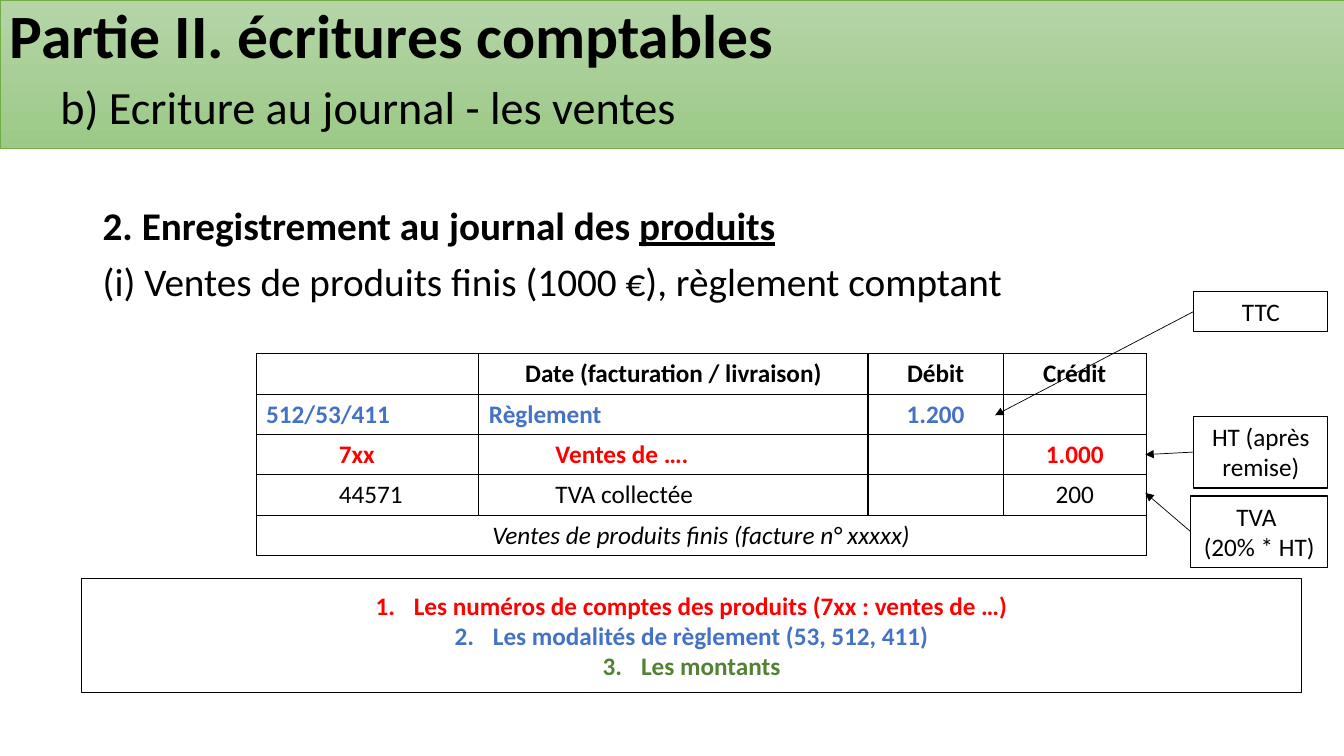
from lxml import etree
from pptx import Presentation
from pptx.dml.color import RGBColor
from pptx.enum.shapes import MSO_CONNECTOR, MSO_SHAPE
from pptx.enum.text import MSO_ANCHOR, PP_ALIGN
from pptx.oxml.ns import qn
from pptx.util import Inches, Pt

BLACK = RGBColor(0, 0, 0)
WHITE = RGBColor(255, 255, 255)
RED = RGBColor(255, 0, 0)
BLUE = RGBColor(0x44, 0x72, 0xC4)
GREEN = RGBColor(0x54, 0x82, 0x35)
EDGE = RGBColor(0x70, 0xAD, 0x47)
PALE = RGBColor(0xB5, 0xD5, 0xA7)
DEEP = RGBColor(0x9C, 0xC9, 0x87)
LEFT, CENTER = PP_ALIGN.LEFT, PP_ALIGN.CENTER
TOP, MIDDLE = MSO_ANCHOR.TOP, MSO_ANCHOR.MIDDLE
RECT, LINE = MSO_SHAPE.RECTANGLE, MSO_CONNECTOR.STRAIGHT

COLS = [0.72, 1.49, 0.66, 3.2, 1.34, 1.42]
ROW = 0.4
MERGES = [(0, 0, 1), (0, 2, 3), (1, 0, 1), (1, 2, 3), (4, 0, 5)]
SPLIT = (2, 3)  # rows whose first two columns are indented
HEAD = dict(bold=True, align=CENTER)
PAY = dict(bold=True, color=BLUE)
SALE = dict(bold=True, color=RED)
CELLS = [
    (0, 2, "Date (facturation / livraison)", HEAD),
    (0, 4, "Débit", HEAD),
    (0, 5, "Crédit", HEAD),
    (1, 0, "512/53/411", PAY),
    (1, 2, "Règlement", PAY),
    (1, 4, "1.200", dict(PAY, align=CENTER)),
    (2, 1, "7xx", SALE),
    (2, 3, "Ventes de ….", SALE),
    (2, 5, "1.000", dict(SALE, align=CENTER)),
    (3, 1, "44571", {}),
    (3, 3, "TVA collectée", {}),
    (3, 5, "200", dict(align=CENTER)),
    (4, 0, "Ventes de produits finis (facture n° xxxxx)",
     dict(italic=True, align=CENTER)),
]
# box left, top, width, height, lines, arrow tip
NOTES = [
    (11.84, 4.13, 1.33, 0.71, ["HT (après remise)"], (11.36, 4.51)),
    (11.81, 4.92, 1.36, 0.71, ["TVA ", "(20% * HT)"], (11.36, 4.89)),
    (11.84, 2.89, 1.33, 0.4, ["TTC"], (9.87, 4.12)),
]
STEPS = [
    ("Les numéros de comptes des produits (7xx : ventes de …)", RED),
    ("Les modalités de règlement (53, 512, 411)", BLUE),
    ("Les montants", GREEN),
]


def write(para, text, size=18, color=BLACK, bold=False, italic=False,
          under=False, align=LEFT):
    para.alignment = align
    run = para.add_run()
    run.text = text
    font = run.font
    font.name, font.size = "Calibri", Pt(size)
    font.bold, font.italic, font.underline = bold, italic, under
    font.color.rgb = color


def paras(frame, count):
    """Return the frame's paragraphs after bringing them to count."""
    for _ in range(count - 1):
        frame.add_paragraph()
    return frame.paragraphs


def number(para):
    props = para._p.get_or_add_pPr()
    props.set("marL", str(Inches(0.38)))
    props.set("indent", str(-Inches(0.38)))
    etree.SubElement(props, qn("a:buAutoNum"), type="arabicPeriod")


def border(cell, hidden):
    """Draw the four sides of a cell, leaving out the hidden ones."""
    props = cell._tc.get_or_add_tcPr()
    for side in "LRTB":
        line = etree.SubElement(props, qn("a:ln" + side), w=str(Pt(1)))
        if side in hidden:
            etree.SubElement(line, qn("a:noFill"))
        else:
            fill = etree.SubElement(line, qn("a:solidFill"))
            etree.SubElement(fill, qn("a:srgbClr"), val=str(BLACK))


class Page:
    def __init__(self, deck):
        self.shapes = deck.slides.add_slide(deck.slide_layouts[6]).shapes

    def text(self, *place):
        frame = self.shapes.add_textbox(*map(Inches, place)).text_frame
        frame.word_wrap = True
        return frame

    def box(self, *place, edge=BLACK, width=1, anchor=TOP):
        shape = self.shapes.add_shape(RECT, *map(Inches, place))
        shape.shadow.inherit = False
        shape.fill.solid()
        shape.fill.fore_color.rgb = WHITE
        shape.line.color.rgb = edge
        shape.line.width = Pt(width)
        shape.text_frame.word_wrap = True
        shape.text_frame.vertical_anchor = anchor
        return shape

    def arrow(self, start, end):
        line = self.shapes.add_connector(LINE, *map(Inches, start + end))
        line.line.color.rgb = BLACK
        line.line.width = Pt(0.5)
        etree.SubElement(line.line._get_or_add_ln(), qn("a:tailEnd"),
                         type="triangle")
        etree.SubElement(line._element.spPr, qn("a:effectLst"))

    def table(self, left, top):
        place = map(Inches, (left, top, sum(COLS), 5 * ROW))
        grid = self.shapes.add_table(5, len(COLS), *place).table
        grid.first_row = grid.horz_banding = False
        for col, width in zip(grid.columns, COLS):
            col.width = Inches(width)
        for row, first, last in MERGES:
            grid.cell(row, first).merge(grid.cell(row, last))
        for row in range(5):
            for col in range(len(COLS)):
                cell = grid.cell(row, col)
                hidden = "LR" if cell.is_spanned else ""
                if row in SPLIT and col < 4:
                    hidden = "RL"[col % 2]
                border(cell, hidden)
                cell.fill.background()
        for row, col, words, style in CELLS:
            para = grid.cell(row, col).text_frame.paragraphs[0]
            write(para, words, **style)


def main():
    deck = Presentation()
    deck.slide_width, deck.slide_height = Inches(13.33), Inches(7.5)
    page = Page(deck)

    lead, case = paras(page.text(0.92, 2, 11.5, 4.76), 2)
    for para in (lead, case):
        para.line_spacing, para.space_before = 0.9, Pt(10)
    write(lead, "2. Enregistrement au journal des ", size=28, bold=True)
    write(lead, "produits", size=28, bold=True, under=True)
    write(case, "(i) Ventes de produits finis (1000 €), règlement comptant",
          size=28)

    page.table(2.54, 3.51)

    for left, top, width, height, lines, tip in NOTES:
        note = page.box(left, top, width, height)
        for para, words in zip(paras(note.text_frame, len(lines)), lines):
            write(para, words, align=CENTER)
        page.arrow((left, top + height / 2), tip)

    band = page.box(0, 0, 13.33, 1.47, edge=EDGE, width=0.5)
    band.fill.gradient()
    band.fill.gradient_angle = 270
    for stop, color in zip(band.fill.gradient_stops, (PALE, DEEP)):
        stop.color.rgb = color
    title = band.text_frame.paragraphs[0]
    title.line_spacing = 0.9
    write(title, "Partie II. écritures comptables", size=44, bold=True)
    title.add_line_break()
    write(title, "\t", size=44, bold=True)
    write(title, "b) Ecriture au journal - les ventes", size=33)

    steps = page.box(0.81, 5.74, 12.1, 1.13, anchor=MIDDLE)
    for para, (words, color) in zip(paras(steps.text_frame, 3), STEPS):
        write(para, words, color=color, bold=True, align=CENTER)
        number(para)

    deck.save("out.pptx")


if __name__ == "__main__":
    main()
